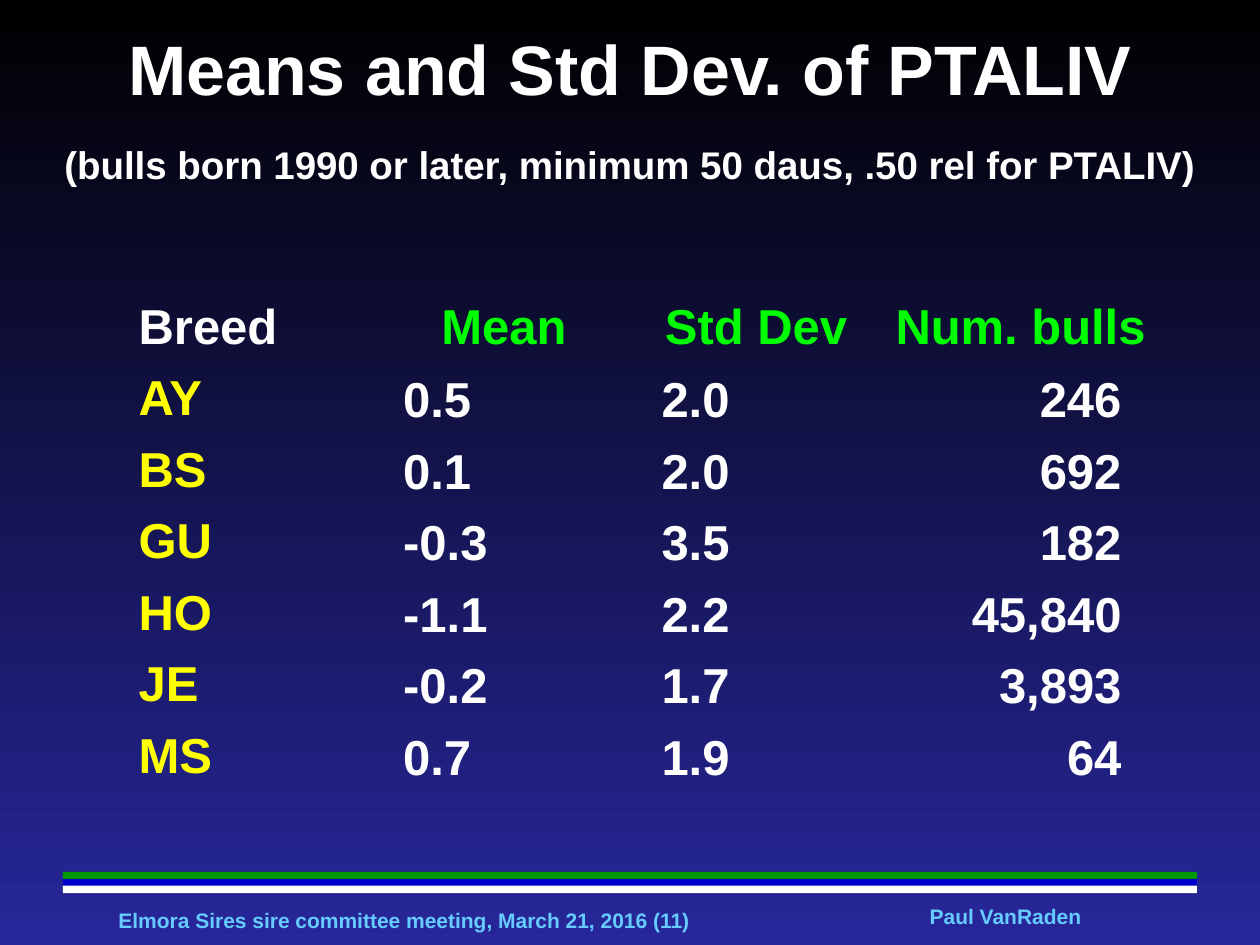
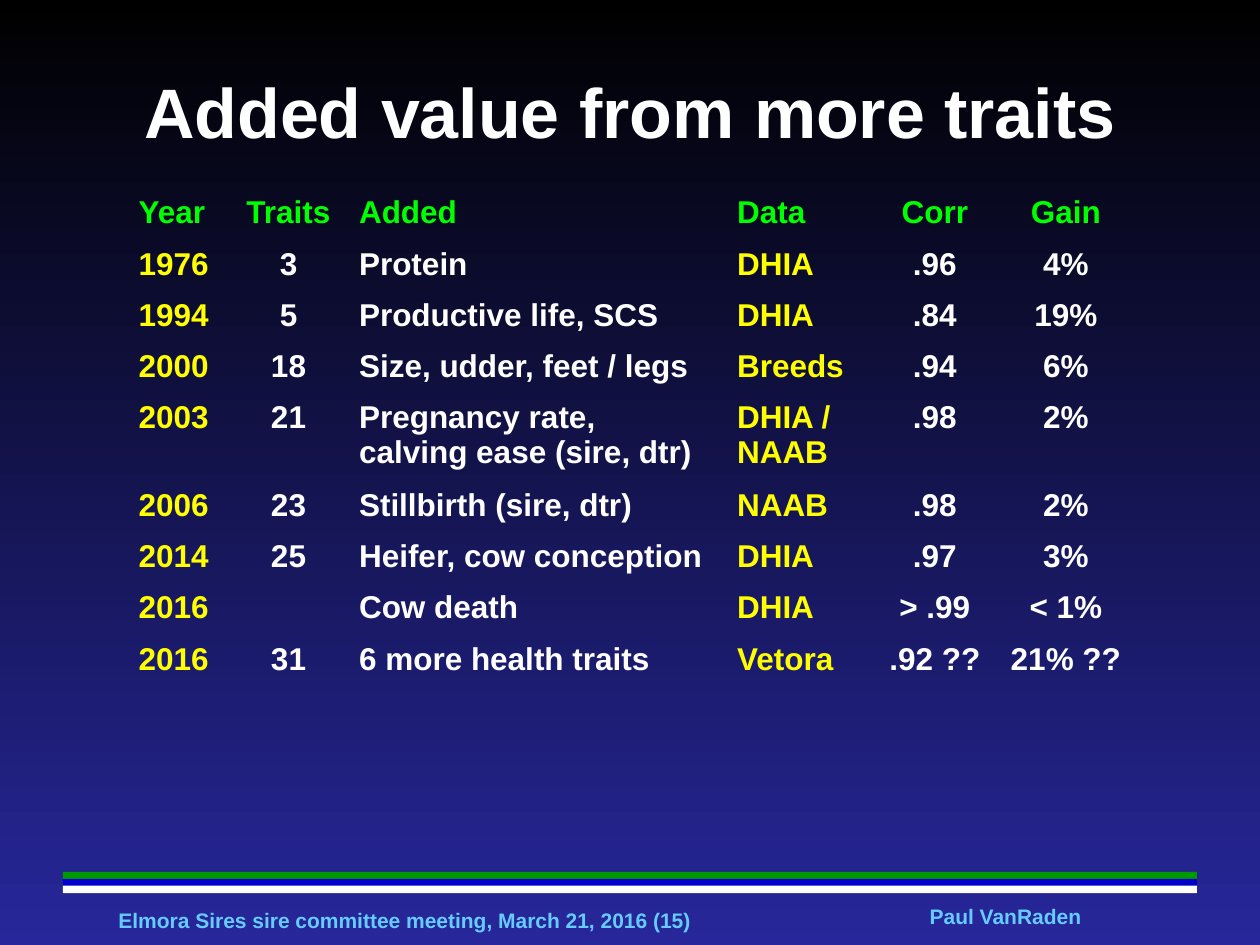
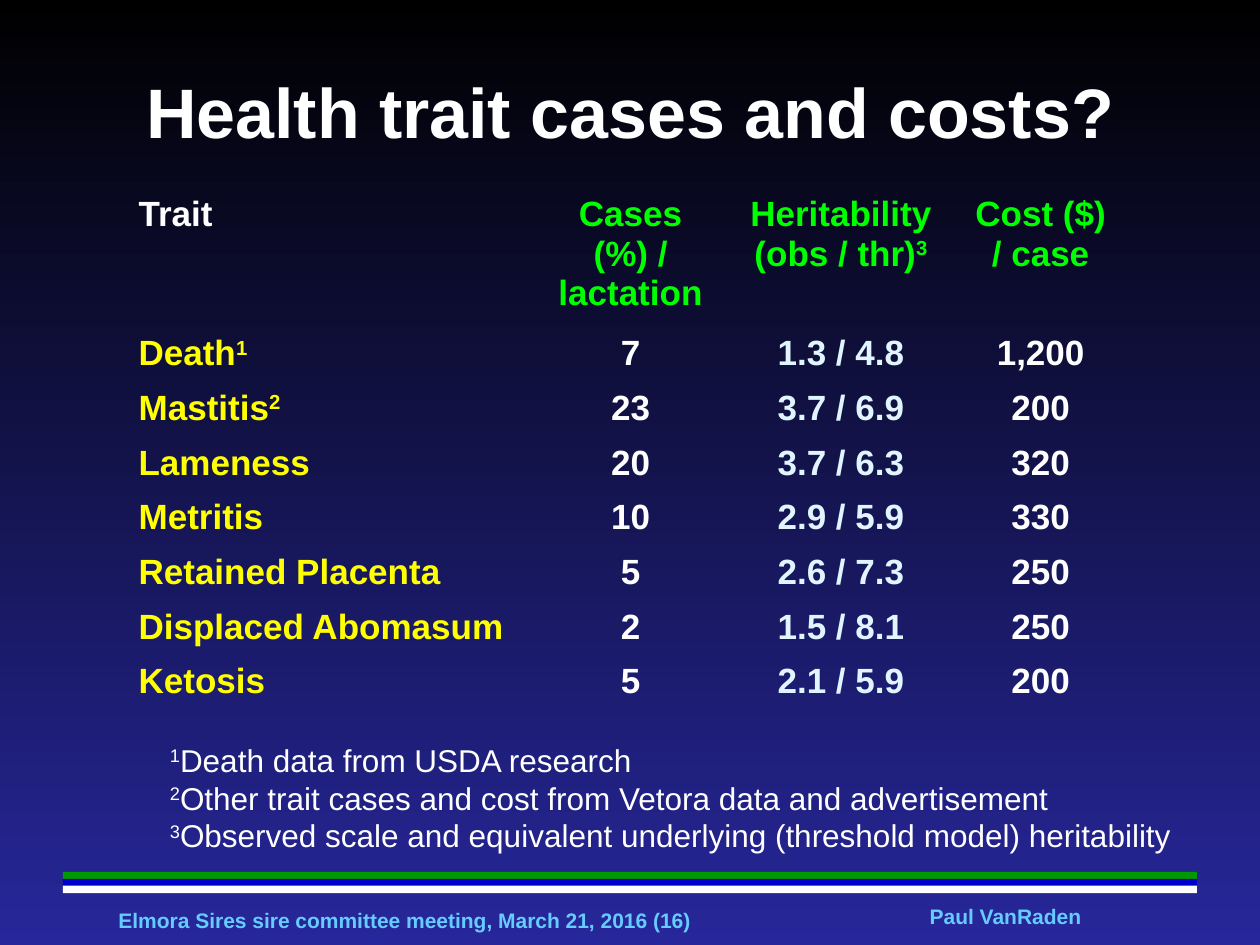
from dataclasses import dataclass

from pptx import Presentation
from pptx.dml.color import RGBColor
from pptx.enum.shapes import MSO_SHAPE as Shape
from pptx.enum.text import MSO_ANCHOR as Anchor, PP_ALIGN as Align
from pptx.util import Inches, Pt

FONT = "Arial"
BLACK, WHITE, NAVY = "000000", "FFFFFF", "27279B"
GREEN, YELLOW, SKY, ICE = "00FF00", "FFFF00", "66CCFF", "E0F5FF"
BAND_COLORS = ["009900", "0000CC", WHITE]
NO_STYLE = "{2D5ABB26-0587-4C30-8999-92F81FD0307C}"


def rgb(value):
    return RGBColor.from_string(value)


@dataclass
class Column:
    heading: str
    width: float
    align: Align = Align.LEFT
    heading_color: str = GREEN
    color: str = WHITE
    heading_align: Align = None
    left: float = 0.1
    right: float = 0.1
    anchor: Anchor = Anchor.TOP


class Slides:
    """Holds the shared style and the current page."""

    def __init__(self):
        self.deck = Presentation()
        self.deck.slide_width, self.deck.slide_height = Inches(10), Inches(7.5)
        self.page = None

    def new_page(self, number):
        self.page = self.deck.slides.add_slide(self.deck.slide_layouts[6])
        # Background running from black down to navy
        fill = self.page.background.fill
        fill.gradient()
        fill.gradient_angle = 270
        for stop, color in zip(fill.gradient_stops, (BLACK, NAVY)):
            stop.color.rgb = rgb(color)
        # Footer texts and the three bands above them
        self.text(f"Elmora Sires sire committee meeting, March 21, 2016 ({number})",
                  0.94, 7.2, 4.72, 0.2, 12, SKY, inset=0)
        self.text("Paul VanRaden", 7.37, 7.17, 1.22, 0.2, 12, SKY,
                  align=Align.CENTER, inset=0, wrap=False)
        for index, color in enumerate(BAND_COLORS):
            self.band(6.92 + index * 0.055, color)

    def band(self, top, color):
        box = self.page.shapes.add_shape(
            Shape.RECTANGLE, Inches(0.5), Inches(top), Inches(9), Inches(0.06))
        box.shadow.inherit = False
        box.fill.solid()
        box.fill.fore_color.rgb = rgb(color)
        box.line.fill.background()

    def set_line(self, para, text, size, color, bold=True, align=Align.LEFT):
        """Fill a paragraph; the character after each ^ is raised."""
        para.alignment = align
        font = para.font
        font.name, font.size, font.bold = FONT, Pt(size), bold
        font.color.rgb = rgb(color)
        plain, *marked = text.split("^")
        if plain:
            para.add_run().text = plain
        for part in marked:
            span = para.add_run()
            span.text = part[0]
            span._r.get_or_add_rPr().set("baseline", "30000")
            if part[1:]:
                para.add_run().text = part[1:]

    def set_lines(self, frame, text, *style, **options):
        for index, line in enumerate(text.split("\n")):
            para = frame.add_paragraph() if index else frame.paragraphs[0]
            self.set_line(para, line, *style, **options)

    def text(self, text, left, top, width, height, size, color, bold=True,
             align=Align.LEFT, anchor=Anchor.MIDDLE, inset=None, wrap=True):
        box = self.page.shapes.add_textbox(
            Inches(left), Inches(top), Inches(width), Inches(height))
        frame = box.text_frame
        frame.word_wrap, frame.vertical_anchor = wrap, anchor
        if inset is not None:
            frame.margin_left = frame.margin_right = Inches(inset)
            frame.margin_top = frame.margin_bottom = Inches(inset)
        self.set_lines(frame, text, size, color, bold=bold, align=align)
        return frame

    def title(self, text, left=0.25, top=0.25, width=9.5):
        return self.text(text, left, top, width, 1.25, 40, WHITE, align=Align.CENTER)

    def table(self, top, columns, rows, heights, size):
        width = sum(column.width for column in columns)
        table = self.page.shapes.add_table(
            len(rows) + 1, len(columns), Inches(1), Inches(top),
            Inches(width), Inches(sum(heights))).table
        table.first_row = table.horz_banding = False
        properties = table._tbl.tblPr
        properties.find("{*}tableStyleId").text = NO_STYLE
        for row, height in zip(table.rows, heights):
            row.height = Inches(height)
        for index, column in enumerate(columns):
            table.columns[index].width = Inches(column.width)
            heading = table.cell(0, index)
            heading.fill.background()
            self.set_lines(heading.text_frame, column.heading, size,
                           column.heading_color,
                           align=column.heading_align or column.align)
            for number, values in enumerate(rows, 1):
                cell = table.cell(number, index)
                cell.fill.background()
                cell.margin_left, cell.margin_right = Inches(column.left), Inches(column.right)
                cell.vertical_anchor = column.anchor
                self.set_lines(cell.text_frame, values[index], size,
                               column.color, align=column.align)


def means_page(slides):
    slides.new_page(11)
    columns = [
        Column("Breed", 2, heading_color=WHITE, color=YELLOW),
        Column("Mean", 2, heading_align=Align.CENTER, left=0.2, anchor=Anchor.MIDDLE),
        Column("Std Dev", 2, heading_align=Align.CENTER, left=0.25, anchor=Anchor.MIDDLE),
        Column("Num. bulls", 2.2, Align.RIGHT, heading_align=Align.CENTER,
               left=0.25, right=0.3, anchor=Anchor.MIDDLE),
    ]
    rows = [
        ("AY", "0.5", "2.0", "246"),
        ("BS", "0.1", "2.0", "692"),
        ("GU", "-0.3", "3.5", "182"),
        ("HO", "-1.1", "2.2", "45,840"),
        ("JE", "-0.2", "1.7", "3,893"),
        ("MS", "0.7", "1.9", "64"),
    ]
    slides.table(2.33, columns, rows, [3.97 / 7] * 7, 28)
    frame = slides.title("Means and Std Dev. of PTALIV\n"
                         "(bulls born 1990 or later, minimum 50 daus, .50 rel for PTALIV)",
                         left=0, top=0.22, width=10)
    subtitle = frame.paragraphs[1]
    subtitle.font.size = Pt(22)
    subtitle.space_before = Pt(18)


def traits_page(slides):
    slides.new_page(15)
    columns = [
        Column("Year", 0.83, color=YELLOW),
        Column("Traits", 0.92, Align.CENTER),
        Column("Added", 3),
        Column("Data", 1.17, color=YELLOW),
        Column("Corr", 1, Align.CENTER),
        Column("Gain", 1.08, Align.CENTER),
    ]
    rows = [
        ("1976", "3", "Protein", "DHIA", ".96", "4%"),
        ("1994", "5", "Productive life, SCS", "DHIA", ".84", "19%"),
        ("2000", "18", "Size, udder, feet / legs", "Breeds", ".94", "6%"),
        ("2003", "21", "Pregnancy rate, calving ease (sire, dtr)", "DHIA / NAAB", ".98", "2%"),
        ("2006", "23", "Stillbirth (sire, dtr)", "NAAB", ".98", "2%"),
        ("2014", "25", "Heifer, cow conception", "DHIA", ".97", "3%"),
        ("2016", "", "Cow death", "DHIA", "> .99", "< 1%"),
        ("2016", "31", "6 more health traits", "Vetora", ".92 ??", "21% ??"),
    ]
    single = 3.25 / 8
    slides.table(1.5, columns, rows, [single] * 4 + [0.7] + [single] * 4, 18)
    slides.title("Added value from more traits")


def costs_page(slides):
    slides.new_page(16)
    columns = [
        Column("Trait", 3.17, heading_color=WHITE, color=YELLOW),
        Column("Cases (%) / lactation", 1.67, Align.CENTER),
        Column("Heritability\n(obs / thr)^3", 1.67, Align.CENTER, color=ICE),
        Column("Cost ($)\n/ case", 1.5, Align.CENTER),
    ]
    rows = [
        ("Death^1", "7", "1.3 / 4.8", "1,200"),
        ("Mastitis^2", "23", "3.7 / 6.9", "200"),
        ("Lameness", "20", "3.7 / 6.3", "320"),
        ("Metritis", "10", "2.9 / 5.9", "330"),
        ("Retained Placenta", "5", "2.6 / 7.3", "250"),
        ("Displaced Abomasum", "2", "1.5 / 8.1", "250"),
        ("Ketosis", "5", "2.1 / 5.9", "200"),
    ]
    slides.table(1.5, columns, rows, [1.1] + [3.04 / 7] * 7, 20)
    slides.title("Health trait cases and costs?")
    # Footnotes
    slides.text("^1Death data from USDA research\n"
                "^2Other trait cases and cost from Vetora data and advertisement\n"
                "^3Observed scale and equivalent underlying (threshold model) heritability",
                1.25, 5.83, 8.23, 1.01, 18, WHITE, bold=False,
                anchor=Anchor.TOP, wrap=False)


def main():
    slides = Slides()
    means_page(slides)
    traits_page(slides)
    costs_page(slides)
    slides.deck.save("out.pptx")


if __name__ == "__main__":
    main()
